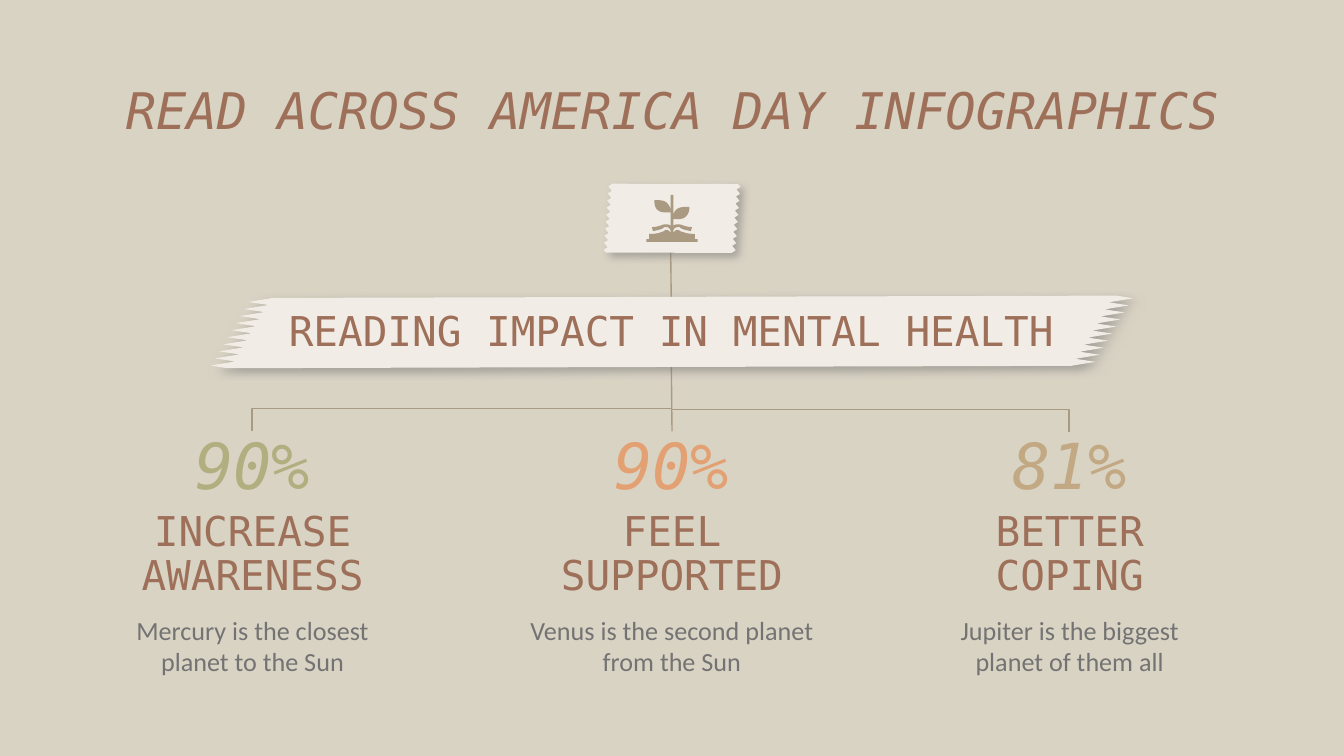
from lxml import etree
from pptx import Presentation, util as u
from pptx.dml.color import RGBColor
from pptx.enum import shapes, text
from pptx.oxml import ns

BROWN, GREY, TAUPE, PAPER = "9E7059", "747373", "AA9A82", "F2ECE7"
MONO = "DejaVu Sans Mono"
rgb = RGBColor.from_string

deck = Presentation()
deck.slide_width = u.Inches(10)
deck.slide_height = deck.slide_width * 9 // 16
slide = deck.slides.add_slide(deck.slide_layouts[5])
slide.background.fill.solid()
slide.background.fill.fore_color.rgb = rgb("D9D3C4")


def write(words, box, size, color, font=MONO, italic=False, spacing=None,
          middle=False, holder=None):
    """Put centred text in a new text box, or in the given placeholder."""
    left, top, width, height = [u.Inches(v) for v in box]
    if holder is None:
        holder = slide.shapes.add_textbox(left, top, width, height)
    else:
        holder.left, holder.top, holder.width, holder.height = left, top, width, height
    frame = holder.text_frame
    frame.word_wrap = True
    frame.auto_size = text.MSO_AUTO_SIZE.NONE
    frame.vertical_anchor = text.MSO_ANCHOR.MIDDLE if middle else text.MSO_ANCHOR.TOP
    frame.margin_left = frame.margin_right = frame.margin_bottom = u.Inches(0.1)
    frame.margin_top = u.Inches(0.1 if middle else 0)
    line = frame.paragraphs[0]
    line.alignment = text.PP_ALIGN.CENTER
    if spacing:
        line.line_spacing = spacing
    run = line.add_run()
    run.text = words
    run.font.name, run.font.size = font, u.Pt(size)
    run.font.italic, run.font.bold = italic, False
    run.font.color.rgb = rgb(color)
    return holder


def cut_out(points, color):
    """Draw a filled outline through points given in inches."""
    corners = [(u.Inches(x), u.Inches(y)) for x, y in points]
    builder = slide.shapes.build_freeform(*corners[0])
    builder.add_line_segments(corners[1:], close=True)
    piece = builder.convert_to_shape()
    piece.shadow.inherit = False
    piece.fill.solid()
    piece.fill.fore_color.rgb = rgb(color)
    piece.line.fill.background()
    return piece


# Title
write("READ ACROSS AMERICA DAY INFOGRAPHICS", (0.78, 0.59, 8.44, 0.52), 27, BROWN,
      italic=True, holder=slide.shapes.title)

# Tree lines: two rotated elbows, then two straight stems
ELBOW, STRAIGHT = shapes.MSO_CONNECTOR.ELBOW, shapes.MSO_CONNECTOR.STRAIGHT
links = []
for kind, x1, y1, x2, y2, turn in [
    (ELBOW, 3.17, 1.38, 3.70, 4.50, 270),
    (ELBOW, 6.74, 1.47, 6.21, 4.43, 90),
    (STRAIGHT, 5, 3.21, 5, 2.68, 0),
    (STRAIGHT, 4.99, 1.83, 5, 2.27, 0),
]:
    link = slide.shapes.add_connector(kind, *[u.Inches(v) for v in (x1, y1, x2, y2)])
    link.line.color.rgb = rgb(TAUPE)
    link.line.width = u.Pt(0.75)
    props = link._element.spPr
    etree.SubElement(props, ns.qn("a:effectLst"))
    if turn:
        props.find(ns.qn("a:xfrm")).set("rot", str(turn * 60000))
        guides = props.find(ns.qn("a:prstGeom")).find(ns.qn("a:avLst"))
        etree.SubElement(guides, ns.qn("a:gd"), name="adj1", fmla="val 31300")
    links.append(link)
center_stem, icon_stem = links[2:]

# Torn paper strips: ten teeth on the right edge, turned half round for the left
for corner, tip, notch, lean, middle_y in [
    ((8.31, 2.20), (8.43, 2.22), (8.25, 2.25), -0.031, 2.47),
    ((5.49, 1.37), (5.51, 1.39), (5.48, 1.41), -0.004, 1.625),
]:
    edge = [corner]
    for i in range(10):
        edge += [(x + i * lean, y + i * 0.0525) for x, y in (tip, notch)]
    strip = cut_out(edge + [(10 - x, 2 * middle_y - y) for x, y in edge], PAPER)
    effects = strip._element.spPr.find(ns.qn("a:effectLst"))
    shade = etree.SubElement(effects, ns.qn("a:outerShdw"), blurRad=str(u.Pt(4.5)),
                             dist=str(u.Pt(3)), dir=str(43 * 60000),
                             algn="bl", rotWithShape="0")
    tint = etree.SubElement(shade, ns.qn("a:srgbClr"), val=GREY)
    etree.SubElement(tint, ns.qn("a:alpha"), val="50000")

# Banner
banner = write("READING IMPACT IN MENTAL HEALTH", (2.05, 2.27, 5.89, 0.41), 22, BROWN)
icon_stem.end_connect(banner, 0)
center_stem.end_connect(banner, 2)

# Three results
for left, share, color, heading, detail in [
    (0.70, "90%", "B1AF80", "INCREASE AWARENESS",
     "Mercury is the closest planet to the Sun"),
    (6.78, "81%", "C2A983", "BETTER COPING",
     "Jupiter is the biggest planet of them all"),
    (3.82, "90%", "E3A072", "FEEL SUPPORTED",
     "Venus is the second planet from the Sun"),
]:
    write(heading, (left, 3.8, 2.36, 0.73), 22, BROWN, spacing=0.9)
    write(detail, (left, 4.57, 2.36, 0.52), 14, GREY, font="Calibri")
    figure = write(share, (left, 3.21, 2.36, 0.49), 34, color, italic=True, middle=True)
    if left == 3.82:
        center_stem.begin_connect(figure, 0)

# Seedling icon: pairs are corners, sixes are cubic curves
seedling = [
    (4.99, 1.45), (4.99, 1.57), (4.99, 1.53, 4.96, 1.49, 4.91, 1.49), (4.87, 1.49),
    (4.87, 1.51), (4.87, 1.55, 4.90, 1.58, 4.94, 1.58), (4.99, 1.58), (4.99, 1.68),
    (4.98, 1.67, 4.97, 1.67, 4.96, 1.67), (4.95, 1.67, 4.94, 1.67, 4.94, 1.67),
    (4.93, 1.67, 4.90, 1.69, 4.85, 1.69), (4.86, 1.72),
    (4.91, 1.71, 4.94, 1.70, 4.94, 1.69), (4.95, 1.69, 4.95, 1.69, 4.96, 1.69),
    (4.97, 1.69, 4.99, 1.70, 4.99, 1.72), (4.99, 1.73),
    (4.98, 1.72, 4.97, 1.71, 4.96, 1.71), (4.95, 1.71, 4.95, 1.71, 4.94, 1.72),
    (4.92, 1.73, 4.88, 1.74, 4.86, 1.74), (4.83, 1.74), (4.83, 1.78), (4.81, 1.78),
    (4.81, 1.80), (5.19, 1.80), (5.19, 1.78), (5.17, 1.78), (5.17, 1.74), (5.15, 1.74),
    (5.12, 1.74, 5.09, 1.73, 5.06, 1.72), (5.05, 1.71, 5.05, 1.71, 5.04, 1.71),
    (5.03, 1.71, 5.02, 1.72, 5.01, 1.73), (5.01, 1.72),
    (5.01, 1.70, 5.03, 1.69, 5.04, 1.69), (5.05, 1.69, 5.05, 1.69, 5.06, 1.69),
    (5.06, 1.70, 5.09, 1.71, 5.14, 1.72), (5.15, 1.69),
    (5.10, 1.69, 5.07, 1.67, 5.06, 1.67), (5.06, 1.67, 5.05, 1.67, 5.04, 1.67),
    (5.03, 1.67, 5.02, 1.67, 5.01, 1.68), (5.01, 1.63), (5.06, 1.63),
    (5.10, 1.63, 5.13, 1.59, 5.13, 1.55), (5.13, 1.54), (5.09, 1.54),
    (5.04, 1.54, 5.01, 1.57, 5.01, 1.61), (5.01, 1.45),
]
contour = []
for step in seedling:
    if len(step) == 2:
        contour.append(step)
        continue
    knots = [contour[-1], step[:2], step[2:4], step[4:]]
    for t in (0.2, 0.4, 0.6, 0.8, 1):
        weights = ((1 - t) ** 3, 3 * t * (1 - t) ** 2, 3 * t * t * (1 - t), t ** 3)
        contour.append(tuple(sum(w * k[axis] for w, k in zip(weights, knots))
                             for axis in (0, 1)))
cut_out(contour, TAUPE)

deck.save("out.pptx")
